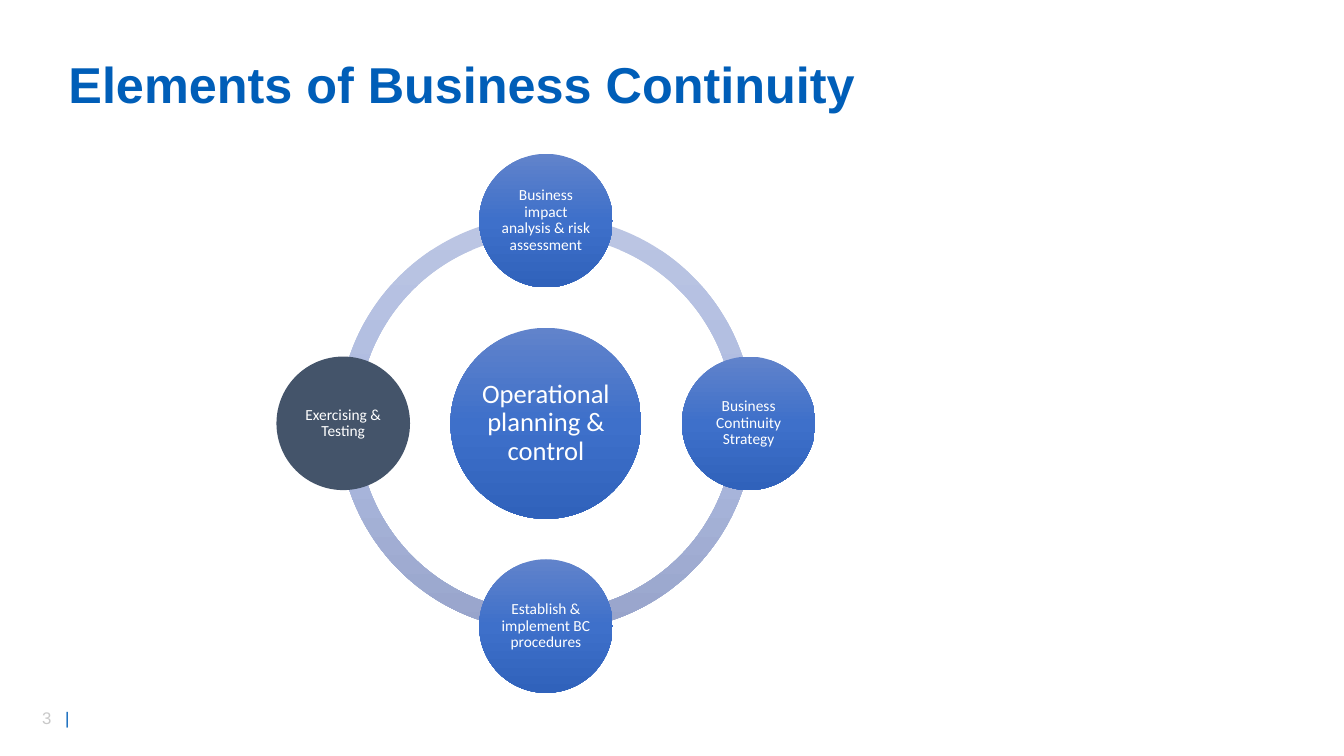
from copy import deepcopy

from lxml.etree import SubElement
from pptx import Presentation
from pptx.dml.color import RGBColor
from pptx.enum.shapes import MSO_SHAPE
from pptx.enum.text import MSO_ANCHOR, PP_ALIGN
from pptx.oxml.ns import qn
from pptx.util import Pt

COLORS = {
    "title": "005EB8",
    "page_number": "C9C9C9",
    "text": "FFFFFF",
    "highlight": "44546A",
}
RING_GRADIENT = ["BBC5E3", "AEBBE0", "98A4CB"]
CIRCLE_GRADIENT = ["6183CB", "3E70CA", "3062BB"]


def write_text(shape, *runs, size, font="Arial", bold=False, align=PP_ALIGN.LEFT,
               anchor=MSO_ANCHOR.TOP, line_spacing=1.0, inset=None, tab_stop=None):
    """Fill a shape with one paragraph made of (text, color name) runs."""
    frame = shape.text_frame
    frame.word_wrap = True
    frame.vertical_anchor = anchor
    if inset is not None:
        frame.margin_left = frame.margin_right = Pt(inset)
        frame.margin_top = frame.margin_bottom = Pt(inset)
    paragraph = frame.paragraphs[0]
    paragraph.alignment = align
    paragraph.line_spacing = line_spacing
    if tab_stop is not None:
        tabs = SubElement(paragraph._p.get_or_add_pPr(), qn("a:tabLst"))
        SubElement(tabs, qn("a:tab"), pos=str(Pt(tab_stop)), algn="l")
    for text, color in runs:
        run = paragraph.add_run()
        run.text = text
        run.font.name = font
        run.font.size = Pt(size)
        run.font.bold = bold
        run.font.color.rgb = RGBColor.from_string(COLORS[color])


def add_round(kind, center_x, center_y, diameter, colors):
    """Add a centred round shape, plain or with an even top-down gradient."""
    shape = slide.shapes.add_shape(
        kind, Pt(center_x - diameter / 2), Pt(center_y - diameter / 2),
        Pt(diameter), Pt(diameter))
    shape.shadow.inherit = False
    shape.line.fill.background()
    if len(colors) == 1:
        shape.fill.solid()
        shape.fill.fore_color.rgb = RGBColor.from_string(colors[0])
        return shape
    shape.fill.gradient()
    shape.fill.gradient_angle = 270
    stop_list = shape._element.spPr.find(".//" + qn("a:gsLst"))
    stop_list.append(deepcopy(stop_list[0]))
    for index, stop in enumerate(shape.fill.gradient_stops):
        stop.position = index / 2
        stop.color.rgb = RGBColor.from_string(colors[index])
    return shape


presentation = Presentation()
presentation.slide_width = Pt(960)
presentation.slide_height = Pt(540)
slide = presentation.slides.add_slide(presentation.slide_layouts[6])

# Page number and title
page_number = slide.shapes.add_textbox(Pt(23), Pt(502), Pt(51), Pt(21.6))
write_text(page_number, ("3\t", "page_number"), ("|", "title"), size=12, tab_stop=16.4)

title = slide.shapes.add_textbox(Pt(41.8), Pt(38.2), Pt(769.7), Pt(48.2))
write_text(title, ("Elements of Business Continuity", "title"), size=36, bold=True,
           anchor=MSO_ANCHOR.MIDDLE, line_spacing=0.9)

# Ring of four quarter arcs; angles are in units of 100000 / 60000 degrees
CENTER_X, CENTER_Y, RADIUS = 390, 302.4, 144.8
QUARTER = 54
for start in (2, 1, 0, 3):
    arc = add_round(MSO_SHAPE.BLOCK_ARC, CENTER_X, CENTER_Y, 296.6, RING_GRADIENT)
    arc.adjustments[0] = start * QUARTER
    arc.adjustments[1] = (start + 1) % 4 * QUARTER
    arc.adjustments[2] = 0.046

# Hub and the four elements: text, direction from the centre, diameter, size, colours
circles = [
    ("Operational planning & control", 0, 0, 136.4, 19, CIRCLE_GRADIENT),
    ("Business impact analysis & risk assessment", 0, -1, 95.4, 11, CIRCLE_GRADIENT),
    ("Business Continuity Strategy", 1, 0, 95.4, 11, CIRCLE_GRADIENT),
    ("Establish & implement BC procedures", 0, 1, 95.4, 11, CIRCLE_GRADIENT),
    ("Exercising & Testing", -1, 0, 95.4, 11, [COLORS["highlight"]]),
]
for text, across, down, diameter, size, colors in circles:
    circle = add_round(MSO_SHAPE.OVAL, CENTER_X + across * RADIUS,
                       CENTER_Y + down * RADIUS, diameter, colors)
    write_text(circle, (text, "text"), size=size, font="Calibri", align=PP_ALIGN.CENTER,
               anchor=MSO_ANCHOR.MIDDLE, line_spacing=0.9, inset=1.4)

presentation.save("out.pptx")
